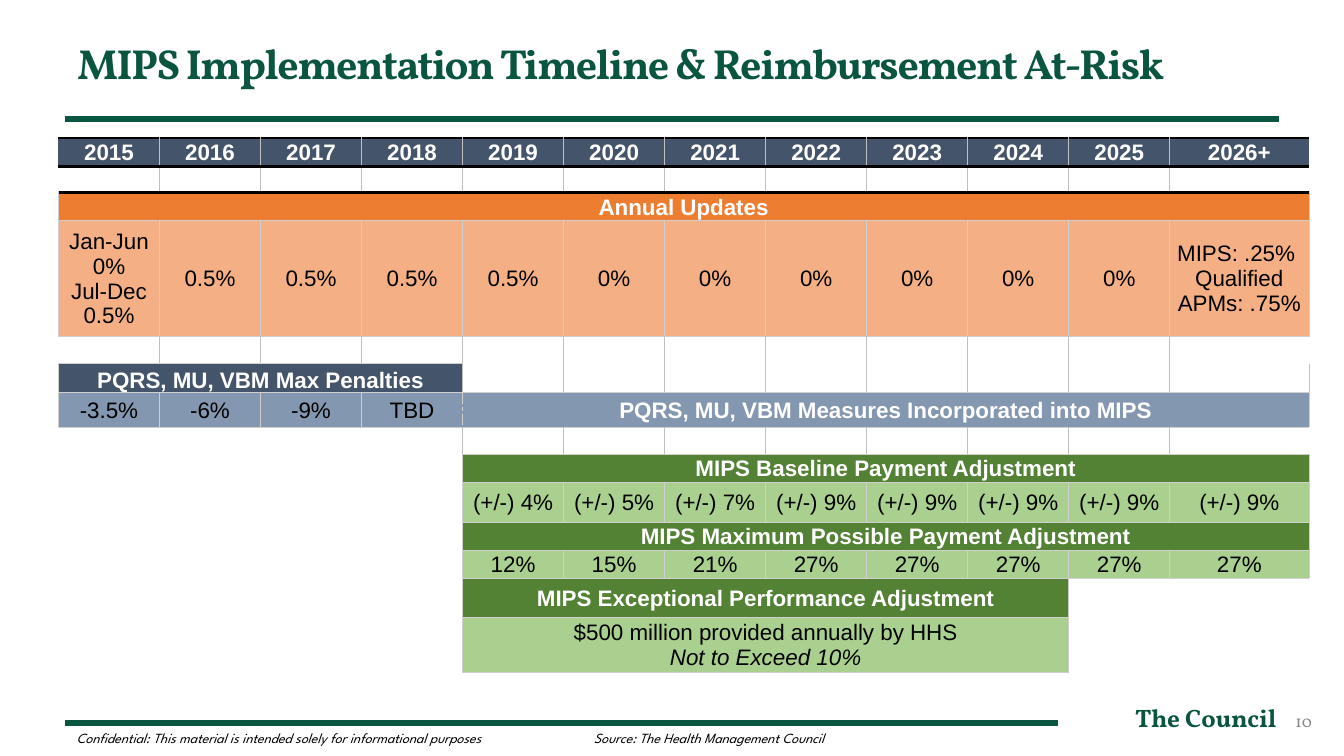
from lxml.etree import SubElement
from pptx import Presentation
from pptx.dml.color import RGBColor
from pptx.enum.shapes import MSO_CONNECTOR, MSO_SHAPE
from pptx.enum.text import MSO_ANCHOR, PP_ALIGN
from pptx.oxml.ns import qn
from pptx.util import Inches, Pt

COLORS = {
    "brand": "0A5540", "white": "FFFFFF", "black": "000000", "page": "898989",
    "navy": "44546A", "steel": "8497B0", "orange": "ED7D31", "peach": "F4B084",
    "green": "548235", "lime": "A9D08E", "edge": "D0CECE", "rule": "BFBFBF",
}
NO_STYLE = "{2D5ABB26-0587-4C30-8999-92F81FD0307C}"
COLUMNS = [10.02] * 11 + [13.8]
LAST = len(COLUMNS) - 1
MIPS_START = 4
YEARS = [str(year) for year in range(2015, 2026)] + ["2026+"]
UPDATES = (["Jan-Jun\n0%\nJul-Dec\n0.5%"] + ["0.5%"] * 4 + ["0%"] * 6
           + ["MIPS: .25% \nQualified\u0020APMs: .75%"])
BASELINE = [f"(+/-) {pct}%" for pct in [4, 5, 7] + [9] * 5]
MAXIMUM = [f"{pct}%" for pct in [12, 15, 21] + [27] * 5]
ROWS = [
    (2.8, [(0, 1, YEARS, "navy", True)]),
    (2.6, []),
    (2.7, [(0, 12, ["Annual Updates"], "orange", True)]),
    (11.5, [(0, 1, UPDATES, "peach", False)]),
    (2.7, []),
    (2.9, [(0, 4, ["PQRS, MU, VBM Max Penalties"], "navy", True)]),
    (3.4, [(0, 1, ["-3.5%", "-6%", "-9%", "TBD"], "steel", False),
           (4, 8, ["PQRS, MU, VBM Measures Incorporated into MIPS"], "steel", True)]),
    (2.7, []),
    (2.6, [(4, 8, ["MIPS Baseline Payment Adjustment"], "green", True)]),
    (4, [(4, 1, BASELINE, "lime", False)]),
    (2.6, [(4, 8, ["MIPS Maximum Possible Payment Adjustment"], "green", True)]),
    (2.7, [(4, 1, MAXIMUM, "lime", False)]),
    (3.9, [(4, 6, ["MIPS Exceptional Performance Adjustment"], "green", True)]),
    (5.1, [(4, 6, ["$500 million provided annually by HHS\nNot to Exceed 10%"],
            "lime", False)]),
]
SPACERS, PENALTY_TITLE, MEASURES, BASELINE_GAP = (1, 4, 5), 5, 6, 7


def rgb(name):
    return RGBColor.from_string(COLORS[name])


def write(tf, text, size=16, font="Arial", color="black", bold=False,
          italic=False, align=PP_ALIGN.LEFT, spacing=None):
    for i, line in enumerate(text.split("\n")):
        p = tf.add_paragraph() if i else tf.paragraphs[0]
        p.alignment = align
        r = p.add_run()
        r.text = line
        r.font.size, r.font.name = Pt(size), font
        r.font.bold, r.font.italic = bold, italic
        r.font.color.rgb = rgb(color)
        if spacing is not None:
            r.font._element.set("spc", str(spacing))


class SlideBuilder:
    def __init__(self, prs, unit=0.1):
        self.unit = unit
        self.s = prs.slides.add_slide(prs.slide_layouts[6])

    def size(self, *lengths):
        return [Inches(n * self.unit) for n in lengths]

    def rule(self, x1, x2, y):
        line = self.s.shapes.add_connector(MSO_CONNECTOR.STRAIGHT, *self.size(x1, y, x2, y))
        line.line.color.rgb = rgb("brand")
        line.line.width = Pt(4.5)
        SubElement(line._element.spPr, qn("a:effectLst"))

    def text(self, box, text, inset=None, anchor=MSO_ANCHOR.TOP, fill=None, **fmt):
        if fill:
            sp = self.s.shapes.add_shape(MSO_SHAPE.RECTANGLE, *self.size(*box))
            sp.shadow.inherit = False
            sp.fill.solid()
            sp.fill.fore_color.rgb = rgb(fill)
            sp.line.fill.background()
        else:
            sp = self.s.shapes.add_textbox(*self.size(*box))
        tf = sp.text_frame
        tf.word_wrap = True
        tf.vertical_anchor = anchor
        if inset is not None:
            tf.margin_left = tf.margin_right = tf.margin_top = tf.margin_bottom = inset
        write(tf, text, **fmt)

    def borders(self, cell, sides):
        tcPr = cell._tc.get_or_add_tcPr()
        for side in "LRTB":
            if side in sides:
                color, width, dash = sides[side]
                ln = SubElement(tcPr, qn(f"a:ln{side}"), w=str(Pt(width)))
                fill = SubElement(ln, qn("a:solidFill"))
                SubElement(fill, qn("a:srgbClr"), val=COLORS[color])
                SubElement(ln, qn("a:prstDash"), val=dash)

    def cell(self, cell, fill, sides, text="", anchor=MSO_ANCHOR.MIDDLE, bold=False):
        self.borders(cell, sides)
        cell.fill.solid()
        cell.fill.fore_color.rgb = rgb(fill)
        cell.vertical_anchor = anchor
        cell.margin_left = cell.margin_right = cell.margin_top = Inches(0.01)
        cell.margin_bottom = 0
        tf = cell.text_frame
        if text:
            write(tf, text, color="white" if bold else "black", bold=bold,
                  align=PP_ALIGN.CENTER)
        else:
            SubElement(tf.paragraphs[0]._p, qn("a:endParaRPr"), sz="1000")
        return tf

    def table(self, x, y, columns, rows):
        heights = [height for height, _ in rows]
        frame = self.s.shapes.add_table(len(rows), len(columns),
                                        *self.size(x, y, sum(columns), sum(heights)))
        tbl = frame.table
        tbl.first_row = tbl.horz_banding = False
        tbl._tbl.tblPr.find(qn("a:tableStyleId")).text = NO_STYLE
        for col, width in zip(tbl.columns, self.size(*columns)):
            col.width = width
        for row, height in zip(tbl.rows, self.size(*heights)):
            row.height = height
        return tbl


def side_rules(col):
    line = ("rule", 0.5, "solid")
    return {side: line for side, end in (("L", 0), ("R", LAST)) if col != end}


def block_sides(row, col):
    if row == 0:
        return side_rules(col) | {"T": ("black", 1.5, "solid"), "B": ("black", 2, "solid")}
    sides = dict.fromkeys("LRTB", ("edge", 0.5, "solid"))
    if row == 1:
        sides["T"] = ("black", 2, "solid")
    if row == MEASURES and col in (MIPS_START - 1, MIPS_START):
        sides["R" if col < MIPS_START else "L"] = ("edge", 1, "dashDot")
    return sides


def blank_sides(row, col):
    if row in SPACERS or (row == BASELINE_GAP and col >= MIPS_START):
        sides = side_rules(col)
        if row == 1:
            sides["T"] = ("black", 2, "solid")
        return sides
    return {}


def fill_timeline(b, tbl):
    for row, (_, blocks) in enumerate(ROWS):
        covered = set()
        for first, span, texts, fill, bold in blocks:
            for i, text in enumerate(texts):
                col = first + i * span
                covered.update(range(col, col + span))
                if span > 1:
                    tbl.cell(row, col).merge(tbl.cell(row, col + span - 1))
                anchor = MSO_ANCHOR.BOTTOM if row in (2, PENALTY_TITLE) else MSO_ANCHOR.MIDDLE
                tf = b.cell(tbl.cell(row, col), fill, block_sides(row, col), text, anchor, bold)
                if row == len(ROWS) - 1:
                    tf.paragraphs[1].runs[0].font.italic = True
                for hidden in range(col + 1, col + span):
                    sides = block_sides(row, hidden)
                    b.cell(tbl.cell(row, hidden), fill, {k: sides[k] for k in "TB"})
        for col in set(range(len(COLUMNS))) - covered:
            b.cell(tbl.cell(row, col), "white", blank_sides(row, col))


def main():
    prs = Presentation()
    prs.slide_width, prs.slide_height = Inches(13.33), Inches(7.5)
    b = SlideBuilder(prs)
    b.rule(6.4, 104.9, 71.7)
    b.text((103.3, 69.2, 24.3, 4), "The Council", size=18, font="Vollkorn",
           color="brand", bold=True, align=PP_ALIGN.RIGHT)
    b.rule(6.4, 126.9, 11.8)
    b.text((6.7, 0.8, 120, 10.8), "MIPS Implementation Timeline & Reimbursement At-Risk",
           anchor=MSO_ANCHOR.MIDDLE, size=30, font="Vollkorn", color="brand",
           bold=True, spacing=-100)
    b.text((100, 69.5, 31.1, 4), "10", anchor=MSO_ANCHOR.MIDDLE, size=12,
           font="Vollkorn", color="page", align=PP_ALIGN.RIGHT)
    fill_timeline(b, b.table(5.8, 13.7, COLUMNS, ROWS))
    note = {"inset": 0, "size": 10, "font": "League Spartan", "italic": True}
    b.text((7.6, 72.4, 85.8, 1.7),
           "Confidential: This material is intended solely for informational purposes", **note)
    b.text((58.9, 72.4, 56.7, 1.7), "Source: The Health Management Council",
           fill="white", **note)
    prs.save("out.pptx")


if __name__ == "__main__":
    main()
